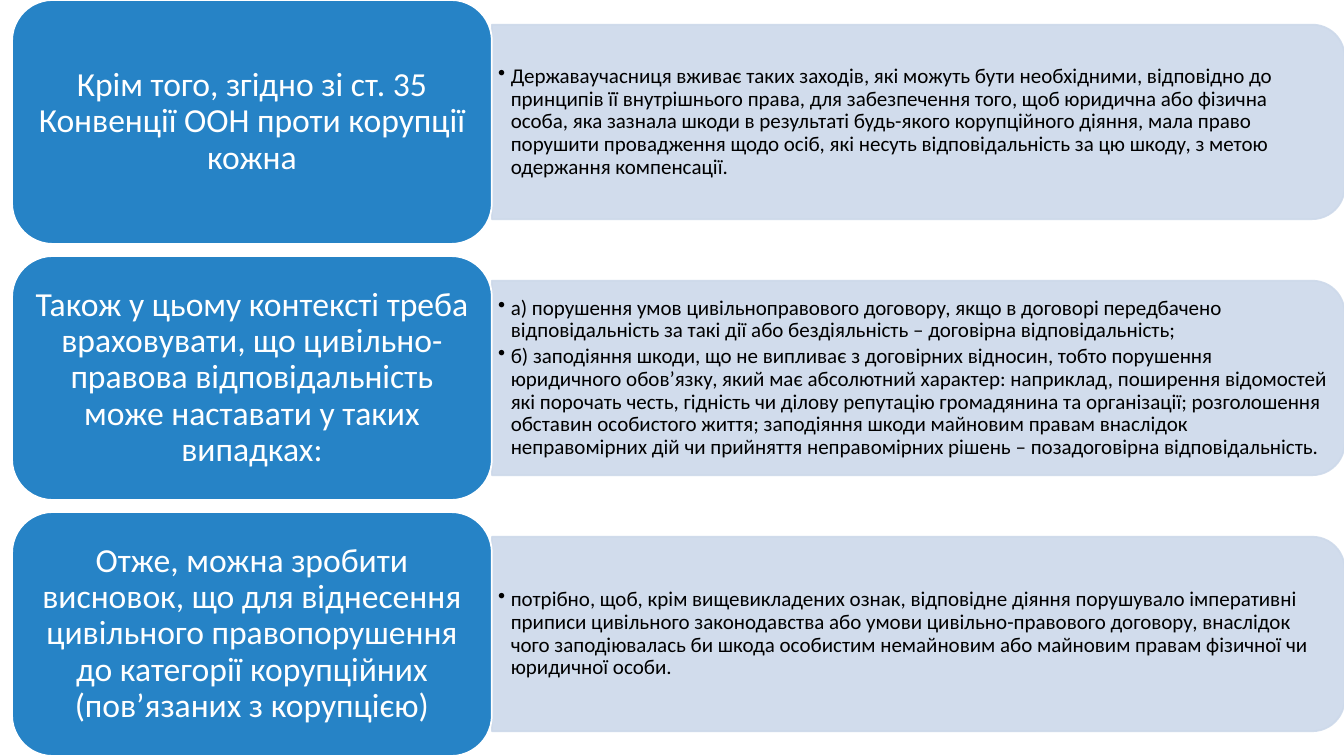
from dataclasses import dataclass

from lxml import etree
from pptx import Presentation
from pptx.dml.color import RGBColor
from pptx.enum.shapes import MSO_SHAPE
from pptx.enum.text import MSO_ANCHOR, PP_ALIGN
from pptx.oxml.ns import qn
from pptx.util import Pt

BLUE = RGBColor(0x26, 0x83, 0xC6)
PALE_BLUE = RGBColor(0xCD, 0xD9, 0xEA)
WHITE = RGBColor(0xFF, 0xFF, 0xFF)
BLACK = RGBColor(0, 0, 0)
ROUNDED = MSO_SHAPE.ROUNDED_RECTANGLE
TWO_ROUNDED = MSO_SHAPE.ROUND_2_SAME_RECTANGLE
MIDDLE = MSO_ANCHOR.MIDDLE
CENTER, LEFT = PP_ALIGN.CENTER, PP_ALIGN.LEFT
FONT = "Calibri"

# Lengths in points
SLIDE_W, SLIDE_H = 960, 540
LABEL_X, LABEL_W, LABEL_H = 8.64, 342.72, 174.24
ROW_PITCH = (SLIDE_H - LABEL_H) / 2
PANEL_X = LABEL_X + LABEL_W
PANEL_W, PANEL_H = 609.12, 138.96
DETAIL_W, DETAIL_H = 601.92, 125.28
BULLET_INDENT = 9


@dataclass(frozen=True)
class Row:
    label: str
    details: tuple[str, ...]


ROWS = (
    Row(
        "Крім того, згідно зі ст. 35 Конвенції ООН проти корупції кожна",
        (
            "Державаучасниця вживає таких заходів, які можуть бути необхідними, "
            "відповідно до принципів її внутрішнього права, для забезпечення того, "
            "щоб юридична або фізична особа, яка зазнала шкоди в результаті "
            "будь-якого корупційного діяння, мала право порушити провадження щодо "
            "осіб, які несуть відповідальність за цю шкоду, з метою одержання "
            "компенсації.",
        ),
    ),
    Row(
        "Також у цьому контексті треба враховувати, що цивільно-правова "
        "відповідальність може наставати у таких випадках:",
        (
            "а) порушення умов цивільноправового договору, якщо в договорі "
            "передбачено відповідальність за такі дії або бездіяльність – "
            "договірна відповідальність;",
            "б) заподіяння шкоди, що не випливає з договірних відносин, тобто "
            "порушення юридичного обов’язку, який має абсолютний характер: "
            "наприклад, поширення відомостей які порочать честь, гідність чи "
            "ділову репутацію громадянина та організації; розголошення обставин "
            "особистого життя; заподіяння шкоди майновим правам внаслідок "
            "неправомірних дій чи прийняття неправомірних рішень – позадоговірна "
            "відповідальність.",
        ),
    ),
    Row(
        "Отже, можна зробити висновок, що для віднесення цивільного "
        "правопорушення до категорії корупційних (пов’язаних з корупцією)",
        (
            "потрібно, щоб, крім вищевикладених ознак, відповідне діяння "
            "порушувало імперативні приписи цивільного законодавства або умови "
            "цивільно-правового договору, внаслідок чого заподіювалась би шкода "
            "особистим немайновим або майновим правам фізичної чи юридичної особи.",
        ),
    ),
)


def write_text(shape, paragraphs: tuple[str, ...], *, size: float, color: RGBColor,
               align=LEFT, margins: tuple[float, float] = (7.2, 3.6),
               space_after: float = 0, bulleted: bool = False) -> None:
    frame = shape.text_frame
    frame.word_wrap = True
    frame.vertical_anchor = MIDDLE
    frame.margin_left = frame.margin_right = Pt(margins[0])
    frame.margin_top = frame.margin_bottom = Pt(margins[1])
    for index, text in enumerate(paragraphs):
        paragraph = frame.add_paragraph() if index else frame.paragraphs[0]
        paragraph.alignment = align
        paragraph.line_spacing = 0.9
        paragraph.space_after = Pt(space_after)
        run = paragraph.add_run()
        run.text = text
        run.font.name = FONT
        run.font.size = Pt(size)
        run.font.color.rgb = color
        if bulleted:
            paragraph.level = 1
            properties = paragraph._p.get_or_add_pPr()
            properties.set("marL", str(Pt(BULLET_INDENT)))
            properties.set("indent", str(-Pt(BULLET_INDENT)))
            etree.SubElement(properties, qn("a:buChar")).set("char", "•")


def add_block(slide, kind, x: float, y: float, width: float, height: float,
              fill: RGBColor, line: RGBColor):
    block = slide.shapes.add_shape(kind, Pt(x), Pt(y), Pt(width), Pt(height))
    block.shadow.inherit = False
    block.fill.solid()
    block.fill.fore_color.rgb = fill
    block.line.color.rgb = line
    block.line.width = Pt(1.25)
    return block


def add_panel(slide, center_y: float) -> None:
    # Turned a quarter so that the rounded corners face right
    center_x = PANEL_X + PANEL_W / 2
    panel = add_block(slide, TWO_ROUNDED, center_x - PANEL_H / 2,
                      center_y - PANEL_W / 2, PANEL_H, PANEL_W, PALE_BLUE, PALE_BLUE)
    panel.rotation = 90
    for color in panel._element.spPr.iter(qn("a:srgbClr")):
        etree.SubElement(color, qn("a:alpha")).set("val", "90000")


def add_row(slide, row: Row, top: float) -> None:
    center_y = top + LABEL_H / 2
    add_panel(slide, center_y)

    details = slide.shapes.add_textbox(Pt(PANEL_X), Pt(center_y - DETAIL_H / 2),
                                       Pt(DETAIL_W), Pt(DETAIL_H))
    write_text(details, row.details, size=15, color=BLACK, margins=(4.5, 2.25),
               space_after=2.25, bulleted=True)

    label = add_block(slide, ROUNDED, LABEL_X, top, LABEL_W, LABEL_H, BLUE, WHITE)
    write_text(label, (row.label,), size=24, color=WHITE, align=CENTER)


def main() -> None:
    deck = Presentation()
    deck.slide_width, deck.slide_height = Pt(SLIDE_W), Pt(SLIDE_H)
    slide = deck.slides.add_slide(deck.slide_layouts[6])
    for index, row in enumerate(ROWS):
        add_row(slide, row, index * ROW_PITCH)
    deck.save("out.pptx")


if __name__ == "__main__":
    main()
